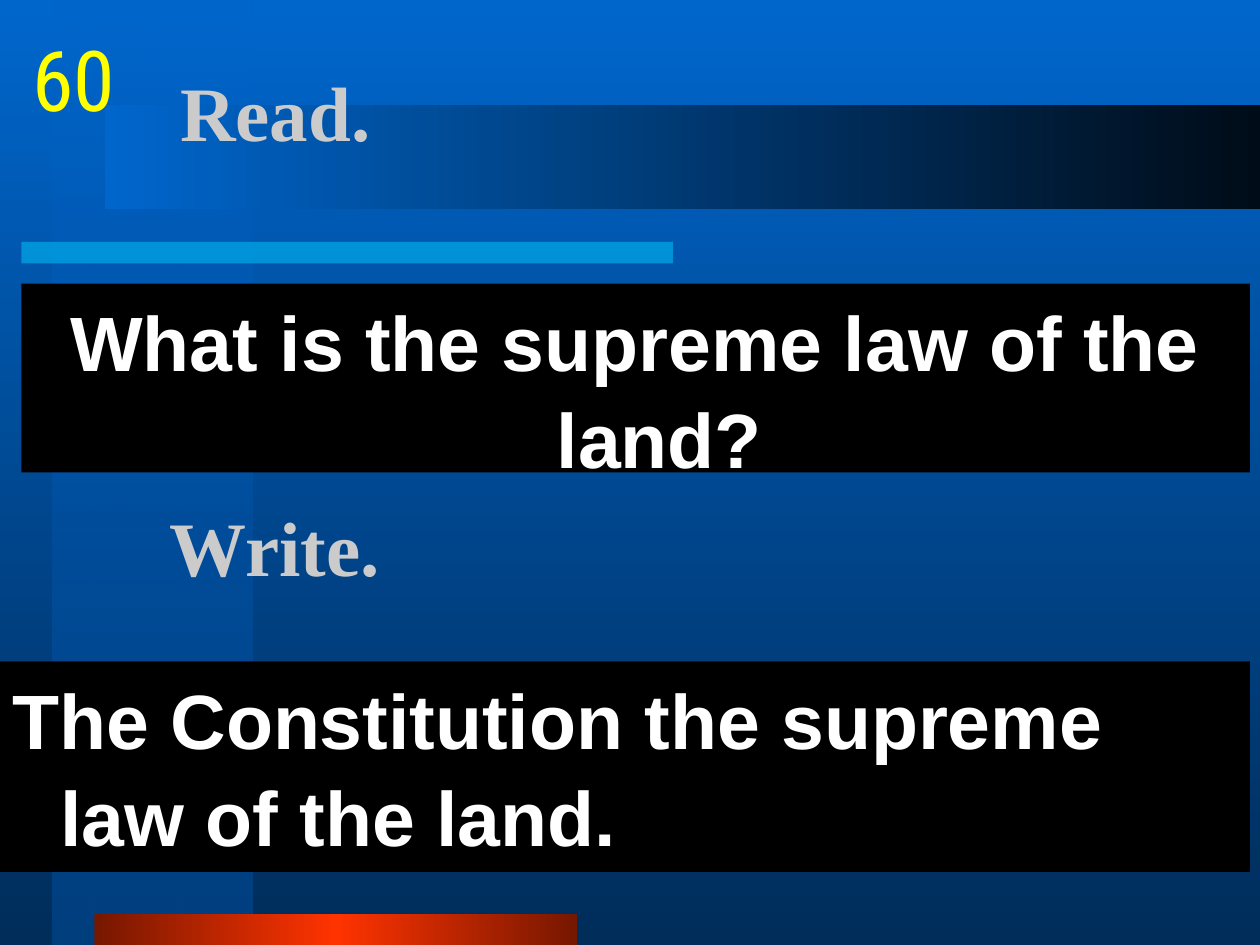
from copy import deepcopy

from lxml.etree import SubElement
from pptx import Presentation
from pptx.dml.color import RGBColor
from pptx.enum.shapes import MSO_SHAPE
from pptx.enum.text import MSO_ANCHOR, MSO_AUTO_SIZE, PP_ALIGN
from pptx.oxml.ns import qn
from pptx.util import Inches, Pt

COLORS = {
    "blue": "0066CC", "navy": "002D5A", "strip": "003F7F", "night": "000C18",
    "cyan": "00CCFF", "red": "FF3300", "rust": "761700", "black": "000000",
    "white": "FFFFFF", "grey": "CBCBCB", "yellow": "FFFF00",
}


def tint(name):
    return RGBColor.from_string(COLORS[name])


def blend(fill, names, angle):
    """Spread the named colours evenly over a gradient fill."""
    fill.gradient_angle = angle
    for i, (stop, name) in enumerate(zip(fill.gradient_stops, names)):
        stop.color.rgb = tint(name)
        stop.position = i / (len(names) - 1)


class Card:
    def __init__(self, deck):
        self.slide = deck.slides.add_slide(deck.slide_layouts[1])
        self.shapes = self.slide.shapes
        fill = self.slide.background.fill
        fill.gradient()
        blend(fill, ("blue", "navy"), 270)

    def bar(self, box, names, angle=0, alphas=()):
        """Add a plain bar; alphas give the opacity of each colour in percent."""
        shape = self.shapes.add_shape(MSO_SHAPE.RECTANGLE, *map(Inches, box))
        shape.shadow.inherit = False
        shape.line.fill.background()
        if len(names) == 1:
            shape.fill.solid()
            shape.fill.fore_color.rgb = tint(names[0])
        else:
            shape.fill.gradient()
            stops = next(shape.element.iter(qn("a:gsLst")))
            for _ in names[2:]:
                stops.append(deepcopy(stops[-1]))
            blend(shape.fill, names, angle)
        hues = list(shape.element.iter(qn("a:srgbClr")))
        for hue, alpha in zip(hues, alphas):
            SubElement(hue, qn("a:alpha")).set("val", str(alpha * 1000))
        return shape

    def holder(self, index, box):
        """Bring a template placeholder to the front and move it."""
        shape = self.slide.placeholders[index]
        shape.element.getparent().append(shape.element)
        shape.left, shape.top, shape.width, shape.height = map(Inches, box)
        return shape

    def label(self, box):
        return self.shapes.add_textbox(*map(Inches, box))

    def letter(self, shape, text, font, color, size=44, bold=True,
               align=PP_ALIGN.LEFT, anchor=MSO_ANCHOR.MIDDLE, wrap=True):
        """Set and format the text of a shape; return its paragraph."""
        frame = shape.text_frame
        frame.text = text
        frame.word_wrap = wrap
        frame.auto_size = MSO_AUTO_SIZE.NONE
        frame.vertical_anchor = anchor
        para = frame.paragraphs[0]
        para.alignment = align
        style = para.runs[0].font
        style.name, style.size, style.bold = font, Pt(size), bold
        style.color.rgb = tint(color)
        return para

    def heading(self, shape, text):
        self.letter(shape, text, "Times New Roman", "grey")

    def panel(self, shape, text, align):
        """Put white text with a hanging indent on black."""
        shape.fill.solid()
        shape.fill.fore_color.rgb = tint("black")
        para = self.letter(shape, text, "Arial", "white", align=align,
                           anchor=MSO_ANCHOR.TOP)
        para.line_spacing = 1.05
        para.space_before = Pt(0)
        props = next(shape.element.iter(qn("a:pPr")))
        props.set("marL", str(Inches(0.38)))
        props.set("indent", str(Inches(-0.38)))
        SubElement(props, qn("a:buNone"))


def main():
    deck = Presentation()
    deck.slide_width, deck.slide_height = Inches(10), Inches(7.5)
    card = Card(deck)

    card.bar((0.42, 0, 1.58, 7.5), ("blue", "strip"), 270, (50, 100))
    card.bar((0.17, 1.92, 5.17, 0.17), ("cyan",), alphas=(50,))
    card.bar((0.75, 7.25, 3.83, 0.25), ("rust", "red", "rust"))
    card.bar((0.83, 0.83, 9.17, 0.83), ("blue", "night"))

    card.heading(card.holder(0, (1.33, 0.25, 8.5, 1.25)), "Read.")
    card.panel(card.holder(1, (0.17, 2.25, 9.75, 1.5)),
               "What is the supreme law of the land?", PP_ALIGN.CENTER)
    card.heading(card.label((1.25, 3.5, 8.5, 1.67)), "Write.")
    card.panel(card.bar((0, 5.25, 9.92, 1.67), ("black",)),
               "The Constitution the supreme law of the land.", PP_ALIGN.LEFT)
    card.letter(card.label((0.17, 0.17, 0.83, 0.83)), "60", "Roboto Condensed",
                "yellow", size=48, bold=False, align=PP_ALIGN.CENTER,
                anchor=MSO_ANCHOR.TOP, wrap=False)
    deck.save("out.pptx")


if __name__ == "__main__":
    main()
